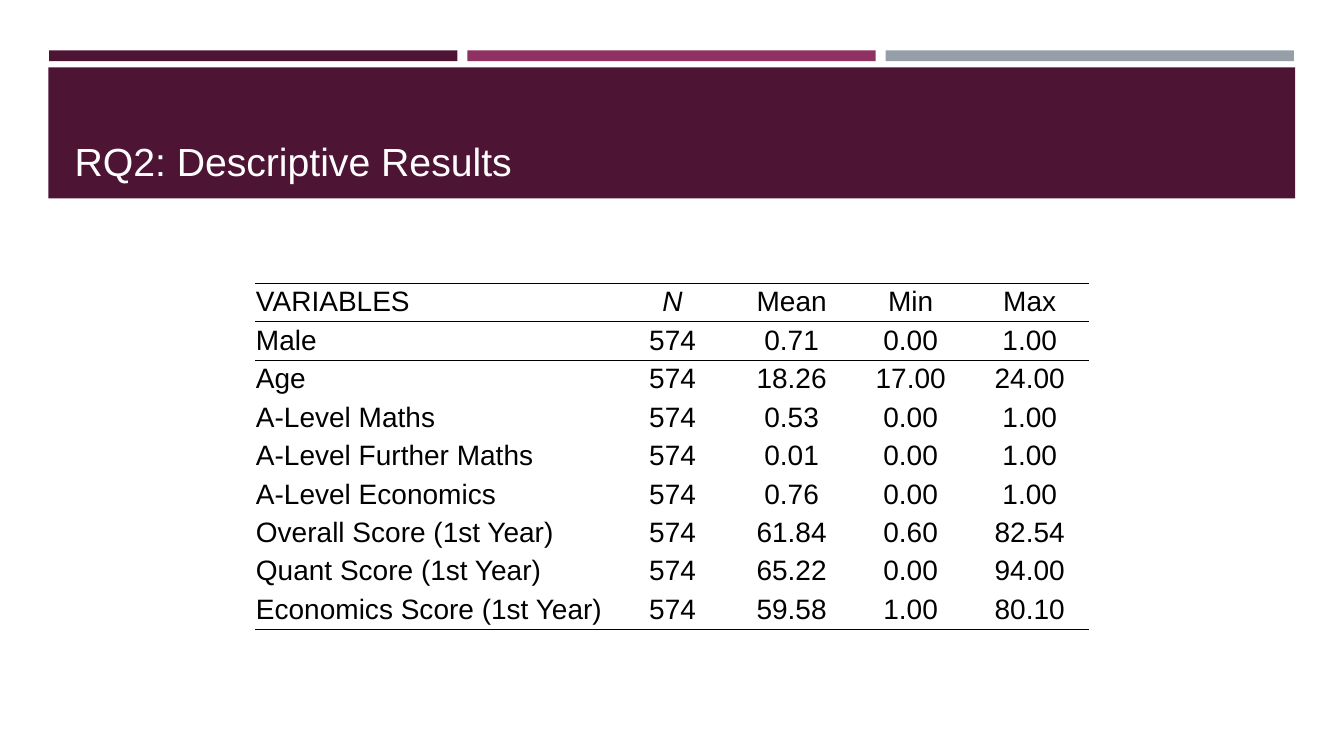
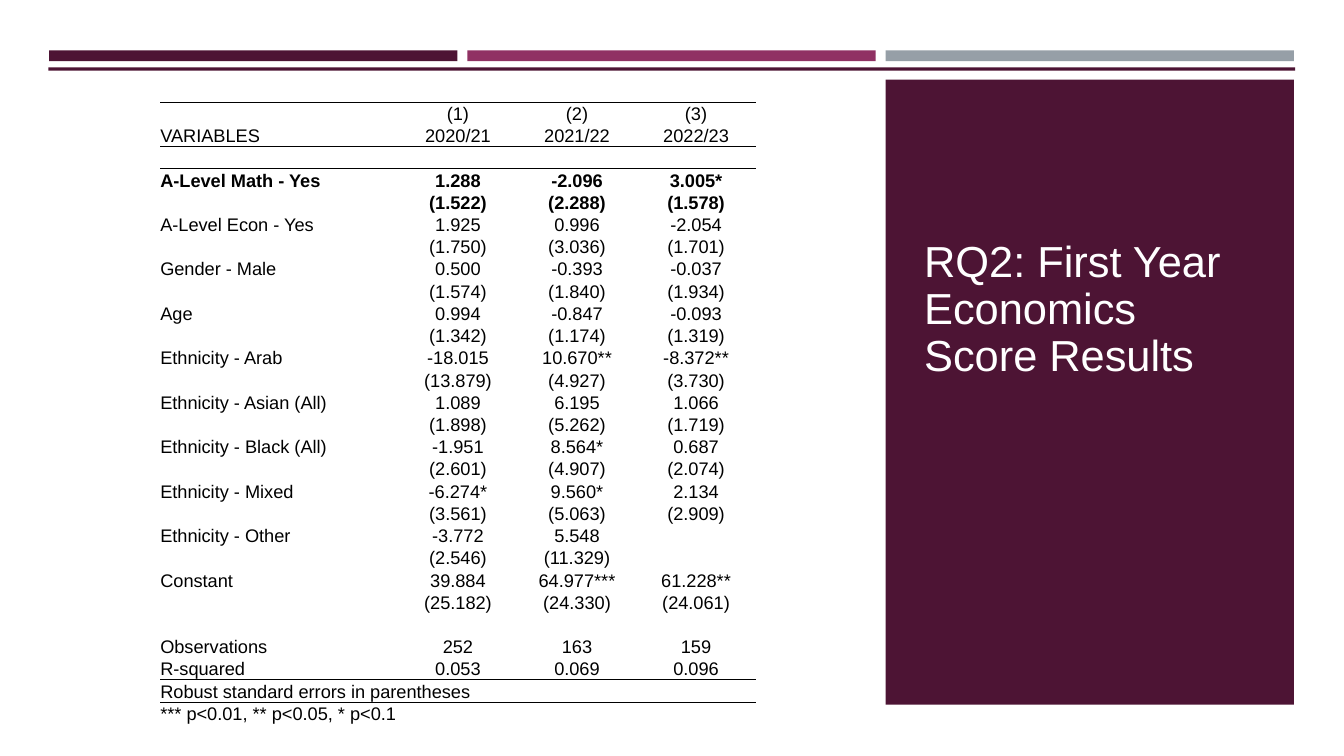
from lxml.etree import SubElement
from pptx import Presentation
from pptx.dml.color import RGBColor
from pptx.enum.shapes import MSO_SHAPE
from pptx.enum.text import MSO_ANCHOR, PP_ALIGN
from pptx.oxml.ns import qn
from pptx.util import Cm, Pt

COLORS = {"plum": "4D1434", "berry": "903163", "grey": "969FA7", "white": "FFFFFF", "black": "000000"}
FONT = "Arial"
PLAIN_TABLE_STYLE = "{2D5ABB26-0587-4C30-8999-92F81FD0307C}"

BAR_COLORS = ["plum", "berry", "grey"]
BAR_LEFT, BAR_TOP, BAR_WIDTH, BAR_HEIGHT, BAR_GAP = 1.24, 1.27, 10.29, 0.27, 0.25
BAND_LEFT, BAND_TOP, BAND_WIDTH = 1.22, 1.7, 31.42

DESCRIPTIVE_TITLE = "RQ2: Descriptive Results"
DESCRIPTIVE_ROWS = [
    ("VARIABLES", "N", "Mean", "Min", "Max"),
    ("Male", "574", "0.71", "0.00", "1.00"),
    ("Age", "574", "18.26", "17.00", "24.00"),
    ("A-Level Maths", "574", "0.53", "0.00", "1.00"),
    ("A-Level Further Maths", "574", "0.01", "0.00", "1.00"),
    ("A-Level Economics", "574", "0.76", "0.00", "1.00"),
    ("Overall Score (1st Year)", "574", "61.84", "0.60", "82.54"),
    ("Quant Score (1st Year)", "574", "65.22", "0.00", "94.00"),
    ("Economics Score (1st Year)", "574", "59.58", "1.00", "80.10"),
]

REGRESSION_TITLE = "RQ2: First Year Economics Score Results"
REGRESSION_HEADER = [("", "(1)", "(2)", "(3)"), ("VARIABLES", "2020/21", "2021/22", "2022/23")]
ESTIMATES = [
    ("A-Level Math - Yes", ("1.288", "-2.096", "3.005*"), ("(1.522)", "(2.288)", "(1.578)")),
    ("A-Level Econ - Yes", ("1.925", "0.996", "-2.054"), ("(1.750)", "(3.036)", "(1.701)")),
    ("Gender - Male", ("0.500", "-0.393", "-0.037"), ("(1.574)", "(1.840)", "(1.934)")),
    ("Age", ("0.994", "-0.847", "-0.093"), ("(1.342)", "(1.174)", "(1.319)")),
    ("Ethnicity - Arab", ("-18.015", "10.670**", "-8.372**"), ("(13.879)", "(4.927)", "(3.730)")),
    ("Ethnicity - Asian (All)", ("1.089", "6.195", "1.066"), ("(1.898)", "(5.262)", "(1.719)")),
    ("Ethnicity - Black (All)", ("-1.951", "8.564*", "0.687"), ("(2.601)", "(4.907)", "(2.074)")),
    ("Ethnicity - Mixed", ("-6.274*", "9.560*", "2.134"), ("(3.561)", "(5.063)", "(2.909)")),
    ("Ethnicity - Other", ("-3.772", "5.548", ""), ("(2.546)", "(11.329)", "")),
    ("Constant", ("39.884", "64.977***", "61.228**"), ("(25.182)", "(24.330)", "(24.061)")),
]
FIT_ROWS = [("Observations", "252", "163", "159"), ("R-squared", "0.053", "0.069", "0.096")]
TABLE_NOTES = ["Robust standard errors in parentheses", "*** p<0.01, ** p<0.05, * p<0.1"]


def write(frame, text, size, color="black", bold=False, italic=False,
          align=PP_ALIGN.LEFT, line_spacing=None):
    para = frame.paragraphs[0]
    para.alignment = align
    if line_spacing:
        para.line_spacing = line_spacing
    if not text:
        SubElement(para._p, qn("a:endParaRPr"), sz=str(size * 100))
        return
    span = para.add_run()
    span.text = text
    span.font.name = FONT
    span.font.size = Pt(size)
    span.font.bold = bold
    span.font.italic = italic
    span.font.color.rgb = RGBColor.from_string(COLORS[color])


def add_block(page, left, top, width, height, color):
    block = page.shapes.add_shape(MSO_SHAPE.RECTANGLE, Cm(left), Cm(top), Cm(width), Cm(height))
    block.shadow.inherit = False
    block.fill.solid()
    block.fill.fore_color.rgb = RGBColor.from_string(COLORS[color])
    block.line.fill.background()


def add_page(deck, band_height):
    page = deck.slides.add_slide(deck.slide_layouts[6])
    for index, color in enumerate(BAR_COLORS):
        left = BAR_LEFT + index * (BAR_WIDTH + BAR_GAP)
        add_block(page, left, BAR_TOP, BAR_WIDTH, BAR_HEIGHT, color)
    add_block(page, BAND_LEFT, BAND_TOP, BAND_WIDTH, band_height, "plum")
    return page


def add_title(page, text, left, top, width, height, **style):
    box = page.shapes.add_textbox(Cm(left), Cm(top), Cm(width), Cm(height))
    box.text_frame.word_wrap = True
    box.text_frame.vertical_anchor = MSO_ANCHOR.BOTTOM
    write(box.text_frame, text, color="white", **style)


def add_rule(cell, edge, weight):
    line = SubElement(cell._tc.get_or_add_tcPr(), qn(edge), w=str(Pt(weight)))
    fill = SubElement(line, qn("a:solidFill"))
    SubElement(fill, qn("a:srgbClr"), val=COLORS["black"])


def add_results_table(page, rows, left, top, widths, row_height, size, rules, rule_weight,
                      insets=(0, 0, 0, 0), bold_rows=(), italic_cells=()):
    frame = page.shapes.add_table(len(rows), len(widths), Cm(left), Cm(top),
                                  Cm(sum(widths)), Cm(row_height * len(rows)))
    table = frame.table
    table.first_row = False
    table.horz_banding = False
    table._tbl.tblPr.find(qn("a:tableStyleId")).text = PLAIN_TABLE_STYLE
    for column, width in zip(table.columns, widths):
        column.width = Cm(width)
    for row_index, values in enumerate(rows):
        table.rows[row_index].height = Cm(row_height)
        for column_index in range(len(widths)):
            cell = table.cell(row_index, column_index)
            cell.margin_left, cell.margin_top, cell.margin_right, cell.margin_bottom = map(Cm, insets)
            cell.vertical_anchor = MSO_ANCHOR.BOTTOM
            if row_index in rules:
                add_rule(cell, "a:lnT", rule_weight)
            if row_index + 1 in rules:
                add_rule(cell, "a:lnB", rule_weight)
            cell.fill.background()
            write(cell.text_frame, values[column_index] if column_index < len(values) else "", size,
                  bold=row_index in bold_rows, italic=(row_index, column_index) in italic_cells,
                  align=PP_ALIGN.CENTER if column_index else PP_ALIGN.LEFT)
        if len(values) == 1:
            table.cell(row_index, 0).merge(table.cell(row_index, len(widths) - 1))


def build_descriptive(deck):
    page = add_page(deck, 3.3)
    add_title(page, DESCRIPTIVE_TITLE, 1.63, 1.96, 30.63, 2.82, size=28)
    add_results_table(page, DESCRIPTIVE_ROWS, 6.43, 7.14, [9.02] + [3] * 4, 0.94, 20,
                      rules=(0, 1, len(DESCRIPTIVE_ROWS)), rule_weight=0.75,
                      insets=(0.02, 0.02, 0.02, 0.1), italic_cells=[(0, 1)])


def build_regression(deck):
    page = add_page(deck, 0.08)
    panel_left = BAR_LEFT + 2 * (BAR_WIDTH + BAR_GAP)
    add_block(page, panel_left, 2.01, BAR_WIDTH, 15.75, "plum")
    add_title(page, REGRESSION_TITLE, 23.04, 3.94, 8.56, 5.79, size=31, line_spacing=0.9)

    blank = ("",) * 4
    rows = REGRESSION_HEADER + [blank]
    for label, coefficients, errors in ESTIMATES:
        rows = rows + [(label, *coefficients), ("", *errors)]
    rows = rows + [blank] + FIT_ROWS
    rules = (0, len(REGRESSION_HEADER), len(rows))
    rows = rows + [(note,) for note in TABLE_NOTES]
    add_results_table(page, rows, 4.04, 2.57, [6] + [3] * 3, 0.56, 13,
                      rules=rules, rule_weight=0.5, bold_rows=(3, 4))


def main():
    deck = Presentation()
    deck.slide_width = Cm(33.87)
    deck.slide_height = Cm(19.05)
    build_descriptive(deck)
    build_regression(deck)
    deck.save("out.pptx")


if __name__ == "__main__":
    main()
